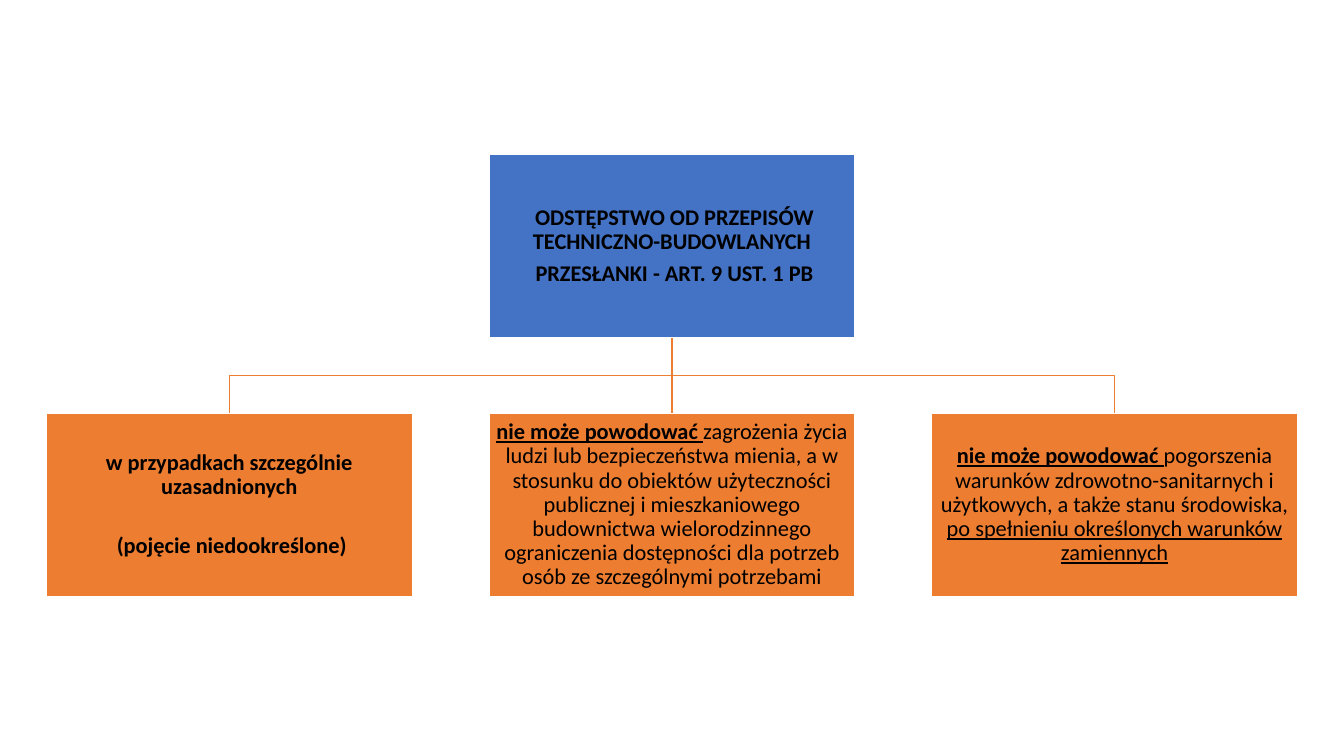
import pptx
import pptx.dml.color
import pptx.enum.shapes
import pptx.enum.text
import pptx.oxml.ns
import pptx.util
from lxml import etree
from pptx.util import Inches

COLORS = {"root": "4472C4", "branch": "ED7D31", "border": "FFFFFF", "text": "000000"}
FONT = "Calibri"
BOX_WIDTH, BOX_HEIGHT = 3.63, 1.82
COLUMN_STEP, LEVEL_STEP = 4.39, 2.57
PARAGRAPH_GAP, WIDE_GAP = 5.6, 24.8

# Each paragraph is (space after, runs); each run is (text, bold, underline)
ROOT_TEXT = [
    (PARAGRAPH_GAP, [(" ODSTĘPSTWO OD PRZEPISÓW TECHNICZNO-BUDOWLANYCH", True, False)]),
    (PARAGRAPH_GAP, [(" PRZESŁANKI - ART. 9 UST. 1 PB", True, False)]),
]
BRANCH_TEXTS = [
    [
        (WIDE_GAP, [("w przypadkach szczególnie uzasadnionych", True, False)]),
        (PARAGRAPH_GAP, [(" (pojęcie niedookreślone)", True, False)]),
    ],
    [(PARAGRAPH_GAP, [
        ("nie może powodować ", True, True),
        ("zagrożenia życia ludzi lub bezpieczeństwa mienia, a w stosunku do obiektów "
         "użyteczności publicznej i mieszkaniowego budownictwa wielorodzinnego "
         "ograniczenia dostępności dla potrzeb osób ze szczególnymi potrzebami", False, False),
    ])],
    [(PARAGRAPH_GAP, [
        ("nie może powodować ", True, True),
        ("pogorszenia warunków zdrowotno-sanitarnych i użytkowych, "
         "a także stanu środowiska, ", False, False),
        ("po spełnieniu określonych warunków zamiennych", False, True),
    ])],
]


def rgb(name):
    return pptx.dml.color.RGBColor.from_string(COLORS[name])


def style_line(line, color):
    line.color.rgb = rgb(color)
    line.width = pptx.util.Pt(1)


def add_box(slide, left, top, fill, paragraphs):
    """Filled rectangle with centred text."""
    shape = slide.shapes.add_shape(
        pptx.enum.shapes.MSO_SHAPE.RECTANGLE,
        Inches(left), Inches(top), Inches(BOX_WIDTH), Inches(BOX_HEIGHT))
    shape.shadow.inherit = False
    shape.fill.solid()
    shape.fill.fore_color.rgb = rgb(fill)
    style_line(shape.line, "border")

    frame = shape.text_frame
    frame.word_wrap = True
    frame.vertical_anchor = pptx.enum.text.MSO_ANCHOR.MIDDLE
    frame.margin_left = frame.margin_right = Inches(0.01)
    frame.margin_top = frame.margin_bottom = Inches(0.01)
    for index, (space_after, runs) in enumerate(paragraphs):
        paragraph = frame.add_paragraph() if index else frame.paragraphs[0]
        paragraph.alignment = pptx.enum.text.PP_ALIGN.CENTER
        paragraph.line_spacing = 0.9
        paragraph.space_after = pptx.util.Pt(space_after)
        for text, bold, underline in runs:
            run = paragraph.add_run()
            run.text = text
            run.font.name = FONT
            run.font.size = pptx.util.Pt(16)
            run.font.bold = bold
            run.font.underline = underline
            run.font.color.rgb = rgb("text")
    return shape


def add_elbow(slide, start_x, start_y, end_x, end_y):
    """Open line that goes down, sideways and down again."""
    middle_y = (start_y + end_y) / 2
    builder = slide.shapes.build_freeform(Inches(start_x), Inches(start_y))
    corners = [(start_x, middle_y), (end_x, middle_y), (end_x, end_y)]
    builder.add_line_segments([(Inches(x), Inches(y)) for x, y in corners], close=False)
    elbow = builder.convert_to_shape()
    elbow.shadow.inherit = False
    elbow.fill.background()
    style_line(elbow.line, "branch")


def add_trunk(slide, x, start_y, end_y):
    """Straight vertical connector."""
    connector = slide.shapes.add_connector(
        pptx.enum.shapes.MSO_CONNECTOR.STRAIGHT,
        Inches(x), Inches(start_y), Inches(x), Inches(end_y))
    style_line(connector.line, "branch")
    etree.SubElement(connector._element.spPr, pptx.oxml.ns.qn("a:effectLst"))
    return connector


def add_hierarchy(slide, left, top):
    """Root box above a row of three branches."""
    center_x = left + COLUMN_STEP + BOX_WIDTH / 2
    root_bottom = top + BOX_HEIGHT
    branch_top = top + LEVEL_STEP

    # Lines lie behind the boxes
    for direction in (1, -1):
        add_elbow(slide, center_x, root_bottom,
                  center_x + direction * COLUMN_STEP, branch_top)
    trunk = add_trunk(slide, center_x, root_bottom, branch_top)

    # Boxes
    root = add_box(slide, left + COLUMN_STEP, top, "root", ROOT_TEXT)
    branches = [add_box(slide, left + column * COLUMN_STEP, branch_top, "branch", text)
                for column, text in enumerate(BRANCH_TEXTS)]
    trunk.begin_connect(root, 2)
    trunk.end_connect(branches[1], 0)


def main():
    presentation = pptx.Presentation()
    presentation.slide_width = Inches(13.33)
    presentation.slide_height = Inches(7.5)
    slide = presentation.slides.add_slide(presentation.slide_layouts[6])
    add_hierarchy(slide, 0.46, 1.53)
    presentation.save("out.pptx")


if __name__ == "__main__":
    main()
